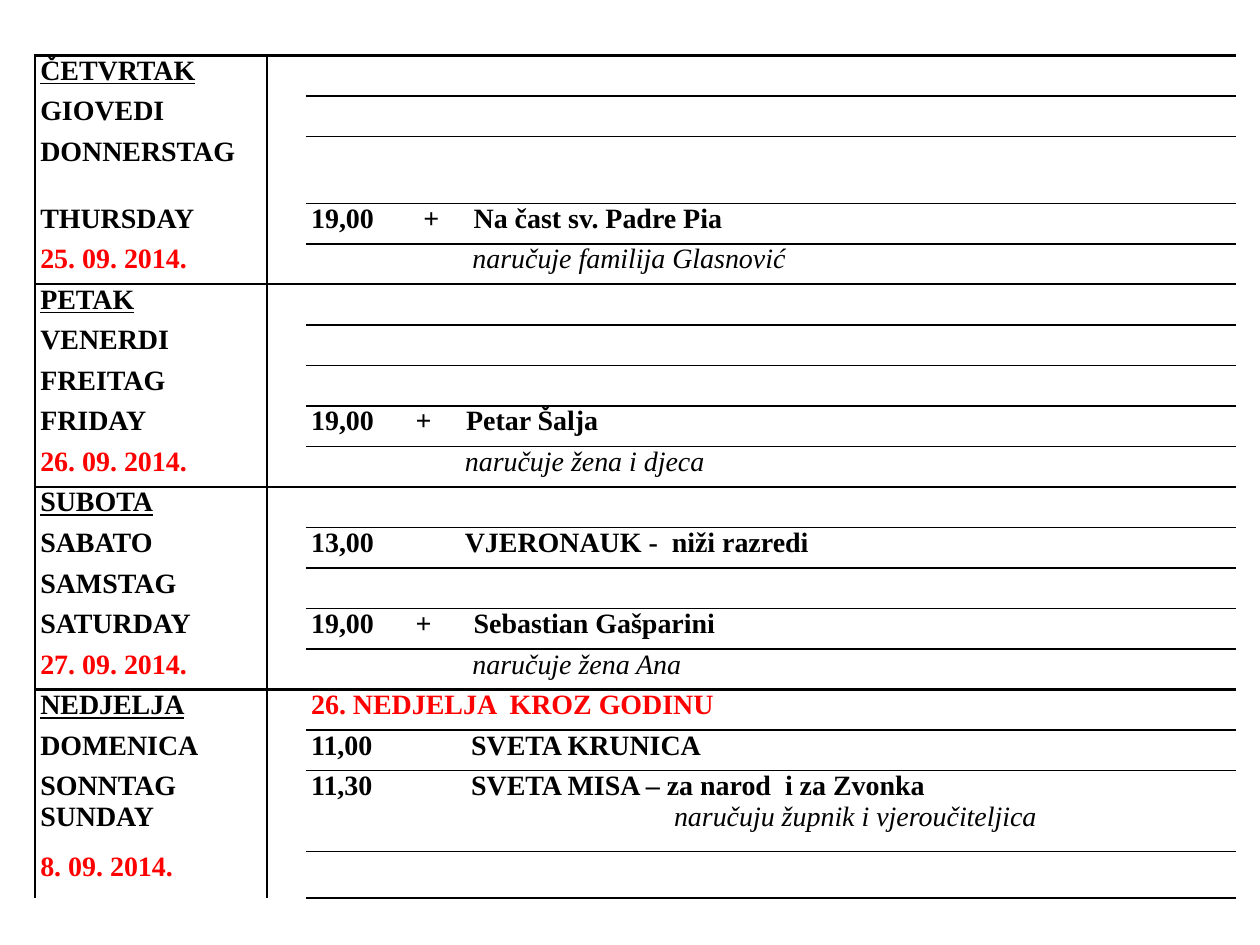
"""Builds the weekly parish schedule slide, Thursday to Sunday."""
from lxml import etree
from pptx import Presentation
from pptx.dml.color import RGBColor
from pptx.oxml.ns import qn
from pptx.util import Inches, Pt

BLACK = RGBColor(0x00, 0x00, 0x00)
RED = RGBColor(0xFF, 0x00, 0x00)
FONT_NAME = "Times New Roman"
NO_STYLE = "{2D5ABB26-0587-4C30-8999-92F81FD0307C}"
OUTER, INNER = 1.5, 1

STYLES = {
    "day": {"bold": True, "underline": True},
    "plain": {"bold": True},
    "red": {"bold": True, "color": RED},
    "donor": {"italic": True},
}

DAYS = [
    ["ČETVRTAK", "GIOVEDI", "DONNERSTAG", "THURSDAY", "25. 09. 2014."],
    ["PETAK", "VENERDI", "FREITAG", "FRIDAY", "26. 09. 2014."],
    ["SUBOTA", "SABATO", "SAMSTAG", "SATURDAY", "27. 09. 2014."],
    ["NEDJELJA", "DOMENICA", "SONNTAG SUNDAY", "8. 09. 2014."],
]
EVENTS = {
    (0, 3): [("19,00\t+\tNa čast sv. Padre Pia", "plain", 0, [0.89, 1.29])],
    (0, 4): [("naručuje familija Glasnović", "donor", 1.28, [])],
    (1, 3): [("19,00\t+\tPetar Šalja", "plain", 0, [0.83, 1.23])],
    (1, 4): [("naručuje žena i djeca", "donor", 1.22, [])],
    (2, 1): [("13,00\tVJERONAUK -  niži razredi", "plain", 0, [1.22])],
    (2, 3): [("19,00\t+\tSebastian Gašparini", "plain", 0, [0.83, 1.29])],
    (2, 4): [("naručuje žena Ana", "donor", 1.28, [])],
    (3, 0): [("26. NEDJELJA  KROZ GODINU", "red", 0, [])],
    (3, 1): [("11,00\tSVETA KRUNICA", "plain", 0, [1.27])],
    (3, 2): [
        ("11,30\tSVETA MISA – za narod  i za Zvonka", "plain", 0, [1.27]),
        ("naručuju župnik i vjeroučiteljica", "donor", 2.88, []),
    ],
}
COLUMN_WIDTHS = [1.84, 0.31, 7.38]
TABLE_HEIGHT = 6.69
TALL_ROWS = {(0, 2): 0.53, (3, 2): 0.64, (3, 3): 0.37}


def write_line(paragraph, text, style, left=0, tabs=()):
    properties = paragraph._p.get_or_add_pPr()
    if left:
        properties.set("marL", str(Inches(left)))
        properties.set("indent", "0")
    if tabs:
        tab_list = etree.SubElement(properties, qn("a:tabLst"))
        for position in tabs:
            etree.SubElement(tab_list, qn("a:tab"), pos=str(Inches(position)), algn="l")
    run = paragraph.add_run()
    run.text = text
    look = STYLES[style]
    font = run.font
    font.name, font.size = FONT_NAME, Pt(16)
    font.bold = look.get("bold", False)
    font.italic = look.get("italic", False)
    font.underline = look.get("underline", False)
    font.color.rgb = look.get("color", BLACK)


def format_cell(cell, borders):
    cell.margin_left = cell.margin_right = Inches(0.04)
    cell.margin_top = cell.margin_bottom = 0
    properties = cell._tc.get_or_add_tcPr()
    for side in "LRTB":
        width = borders.get(side, 0)
        line = etree.SubElement(properties, qn("a:ln" + side), w=str(Pt(width)))
        if width:
            fill = etree.SubElement(line, qn("a:solidFill"))
            etree.SubElement(fill, qn("a:srgbClr"), val=str(BLACK))
        else:
            etree.SubElement(line, qn("a:noFill"))
    cell.fill.background()


def cell_borders(column, first, last):
    borders = [{"L": OUTER, "R": OUTER}, {"L": OUTER}, {"T": INNER, "B": INNER}][column]
    if first:
        borders["T"] = OUTER
    if last:
        borders["B"] = OUTER
    return borders


def label_style(line, count):
    if line == 0:
        return "day"
    return "red" if line == count - 1 else "plain"


def main():
    presentation = Presentation()
    presentation.slide_width, presentation.slide_height = Inches(10), Inches(7.5)
    slide = presentation.slides.add_slide(presentation.slide_layouts[6])
    lines = [(day, line) for day, labels in enumerate(DAYS) for line in range(len(labels))]
    row_height = (TABLE_HEIGHT - sum(TALL_ROWS.values())) / (len(lines) - len(TALL_ROWS))
    frame = slide.shapes.add_table(
        len(lines), len(COLUMN_WIDTHS), Inches(0.28), Inches(0.44),
        Inches(sum(COLUMN_WIDTHS)), Inches(TABLE_HEIGHT))
    table = frame.table
    table.first_row = table.horz_banding = False
    table._tbl.tblPr.find(qn("a:tableStyleId")).text = NO_STYLE
    for column, width in zip(table.columns, COLUMN_WIDTHS):
        column.width = Inches(width)

    for row, (day, line) in enumerate(lines):
        table.rows[row].height = Inches(TALL_ROWS.get((day, line), row_height))
        labels = DAYS[day]
        closes_day = line == len(labels) - 1 and day < len(DAYS) - 1
        for column in range(len(COLUMN_WIDTHS)):
            format_cell(table.cell(row, column), cell_borders(column, line == 0, closes_day))
        label = table.cell(row, 0).text_frame.paragraphs[0]
        write_line(label, labels[line], label_style(line, len(labels)))
        text_frame = table.cell(row, 2).text_frame
        for index, event in enumerate(EVENTS.get((day, line), [])):
            paragraph = text_frame.add_paragraph() if index else text_frame.paragraphs[0]
            write_line(paragraph, *event)

    presentation.save("out.pptx")


if __name__ == "__main__":
    main()
